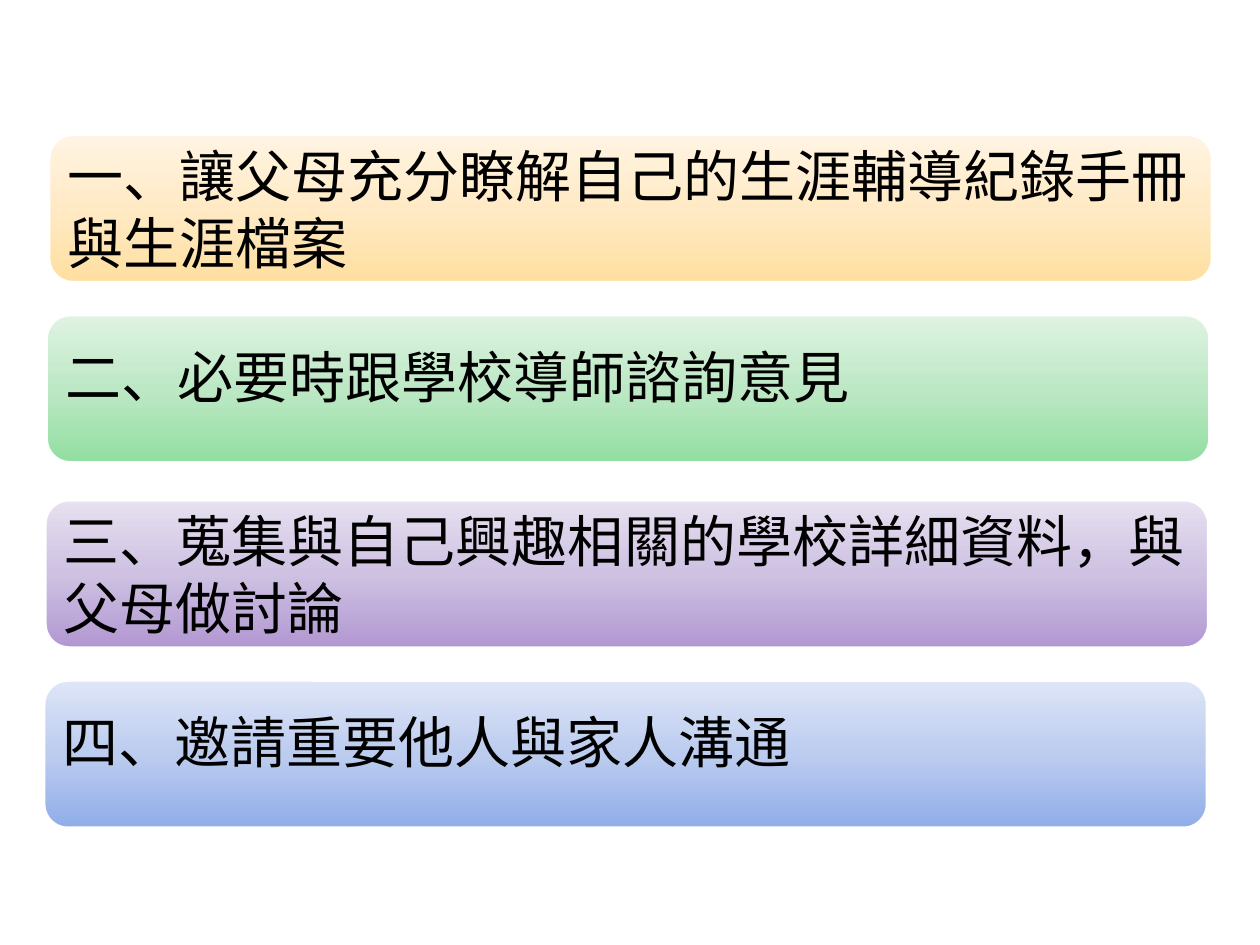
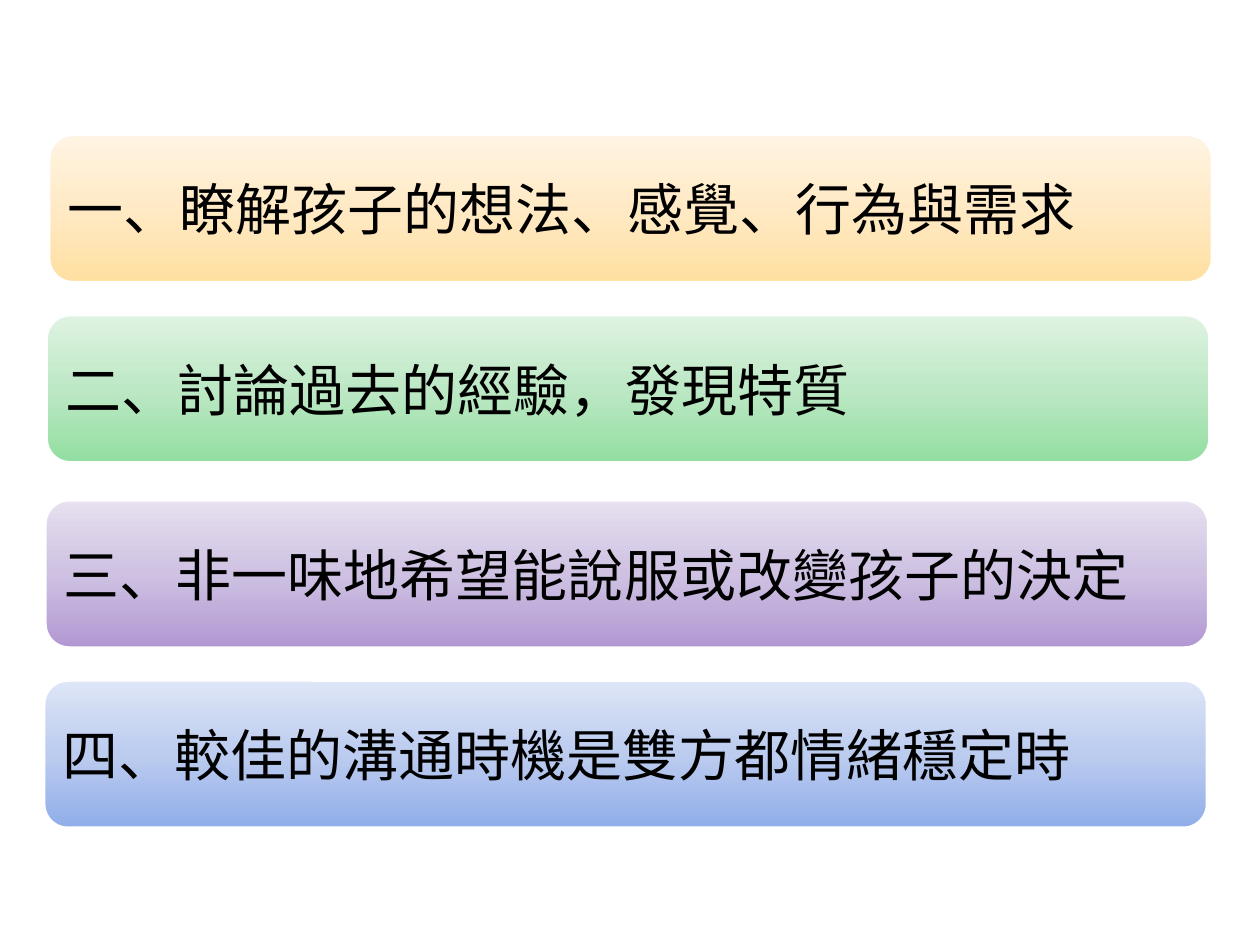
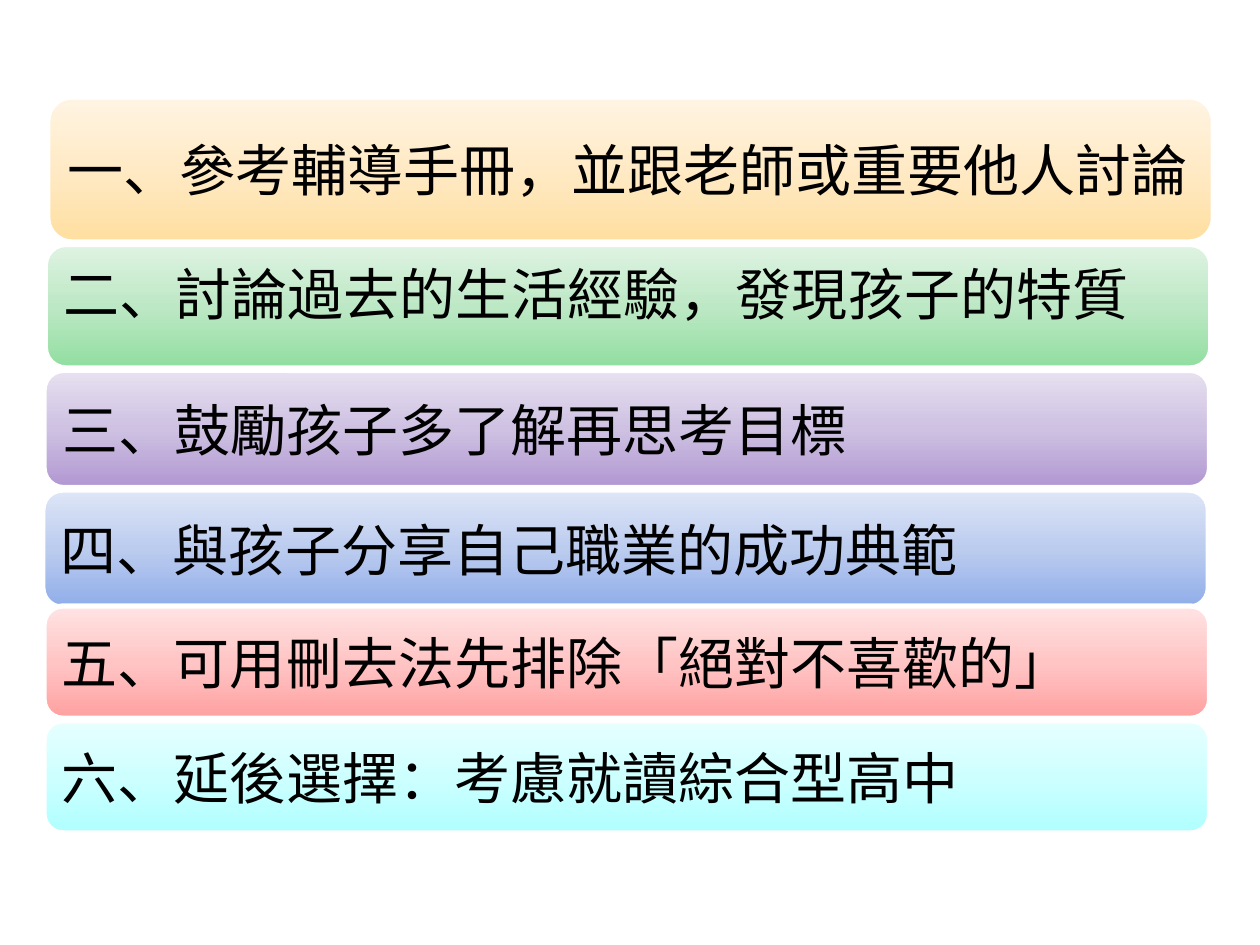
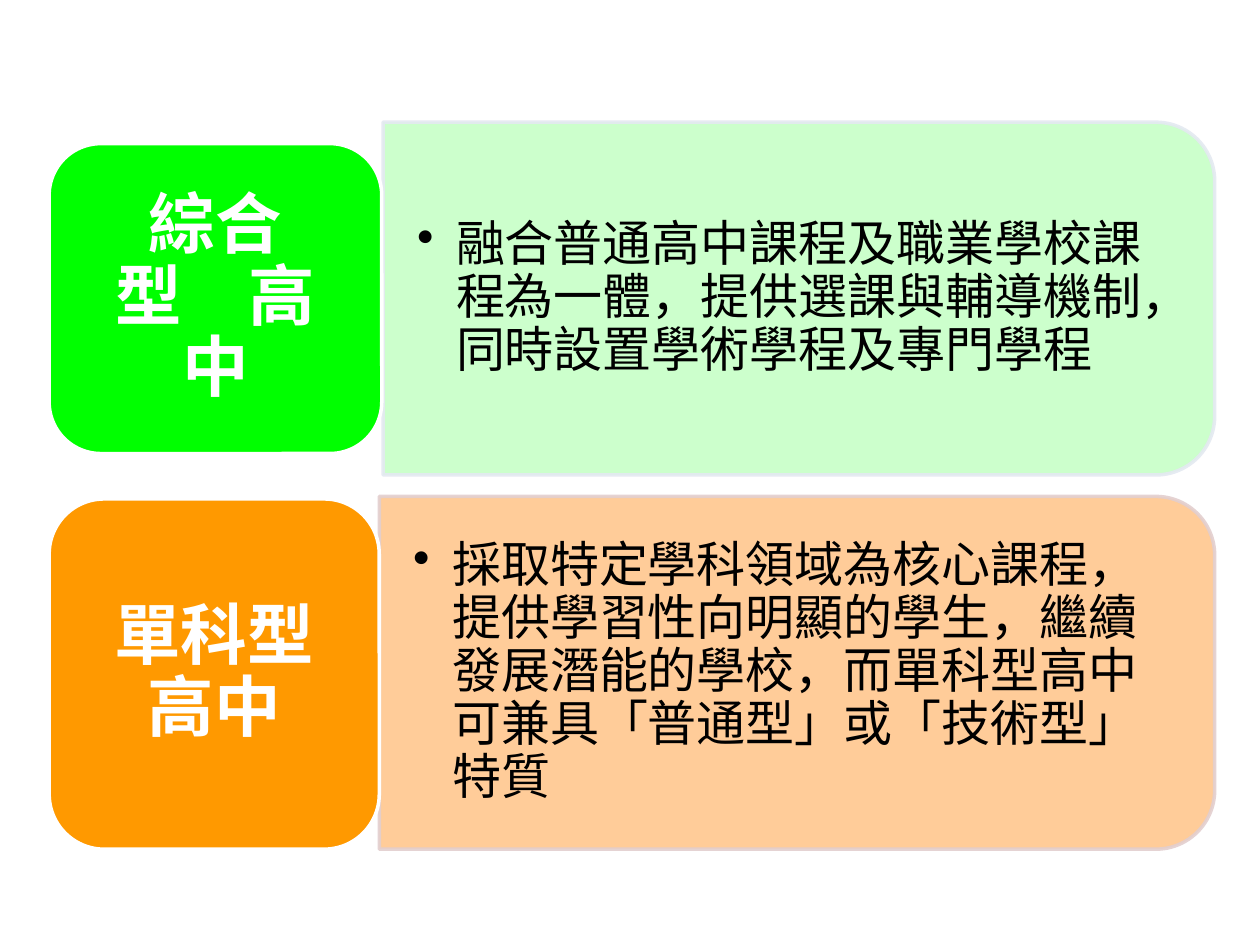
"""Build four slides of advice on family career talks and school types."""
from copy import deepcopy
from dataclasses import dataclass
from typing import Any, NamedTuple

from lxml.etree import SubElement
from pptx import Presentation
from pptx.dml.color import RGBColor
from pptx.enum.shapes import MSO_SHAPE as Preset
from pptx.enum.text import MSO_ANCHOR as Anchor, PP_ALIGN as Align
from pptx.oxml.ns import qn
from pptx.util import Inches, Pt


@dataclass(frozen=True)
class Theme:
    """Colours, fonts and type sizes of the deck."""
    black: str = "000000"
    white: str = "FFFFFF"
    bar_font: str = "Times New Roman"
    body_font: str = "Calibri"
    bar_size: int = 32
    body_size: int = 28
    tag_size: int = 38
    bar_line: float = 3
    block_line: float = 2
    gradients: tuple = (
        ("FFDFA0", "FFEAC5", "FFF4E3"),
        ("91DEA0", "BDE8C5", "DFF3E3"),
        ("B197D2", "CEC1E2", "E7E1F0"),
        ("8FADE9", "BCCCEF", "DEE6F7"),
        ("FFA0A0", "FFC5C5", "FFE3E3"),
        ("AFFFFF", "CEFFFF", "E7FFFF"),
    )


class Box(NamedTuple):
    """A frame in inches."""
    left: float
    top: float
    width: float
    height: float

    def lengths(self) -> list:
        """Return the frame as slide lengths."""
        return [Inches(value) for value in self]

    def inset(self, across: float, down: float) -> "Box":
        """Return the frame shrunk on all sides."""
        return Box(self.left + across, self.top + down,
                   self.width - 2 * across, self.height - 2 * down)

    def before_quarter_turn(self) -> "Box":
        """Return the frame that covers this one once turned by 90 degrees."""
        shift = (self.width - self.height) / 2
        return Box(self.left + shift, self.top - shift, self.height, self.width)


class Bar(NamedTuple):
    """One line of advice; tight bars use exact line spacing."""
    text: str
    tight: bool = False


class School(NamedTuple):
    """A school type with its tag and its description panel."""
    name: str
    description: str
    tag: Box
    panel: Box
    tag_fill: str
    panel_fill: str
    panel_line: str


THEME = Theme()
BAR_WIDTH = 9.25
BAR_LEFTS = (0.38, 0.36, 0.35, 0.34, 0.35, 0.35)
FOUR_ROWS = ((1.06, 1.19), (2.49, 1.19), (3.96, 1.19), (5.39, 1.19))
SIX_ROWS = ((0.77, 1.15), (1.94, 0.98), (2.94, 0.93),
            (3.89, 0.93), (4.81, 0.89), (5.72, 0.89))

BAR_SLIDES = (
    (FOUR_ROWS, (
        Bar("一、讓父母充分瞭解自己的生涯輔導紀錄手冊與生涯檔案"),
        Bar("二、必要時跟學校導師諮詢意見", tight=True),
        Bar("三、蒐集與自己興趣相關的學校詳細資料，與父母做討論"),
        Bar("四、邀請重要他人與家人溝通", tight=True),
    )),
    (FOUR_ROWS, (
        Bar("一、瞭解孩子的想法、感覺、行為與需求"),
        Bar("二、討論過去的經驗，發現特質"),
        Bar("三、非一味地希望能說服或改變孩子的決定"),
        Bar("四、較佳的溝通時機是雙方都情緒穩定時"),
    )),
    (SIX_ROWS, (
        Bar("一、參考輔導手冊，並跟老師或重要他人討論"),
        Bar("二、討論過去的生活經驗，發現孩子的特質", tight=True),
        Bar("三、鼓勵孩子多了解再思考目標"),
        Bar("四、與孩子分享自己職業的成功典範"),
        Bar("五、可用刪去法先排除「絕對不喜歡的」"),
        Bar("六、延後選擇：考慮就讀綜合型高中"),
    )),
)

SCHOOLS = (
    School("綜合型　高中",
           "融合普通高中課程及職業學校課程為一體，提供選課與輔導機制，同時設置學術學程及專門學程",
           Box(0.39, 1.14, 2.64, 2.46), Box(3.04, 0.97, 6.6, 2.8),
           "00FF00", "CCFFCC", "E4E9F1"),
    School("單科型高中",
           "採取特定學科領域為核心課程，提供學習性向明顯的學生，繼續發展潛能的學校，而單科型高中可兼具「普通型」或「技術型」特質",
           Box(0.39, 3.96, 2.62, 2.78), Box(3.01, 3.94, 6.63, 2.8),
           "FF9900", "FFCC99", "E3CFCF"),
)


def apply(target: Any, values: dict) -> None:
    """Set every named attribute on the target."""
    for name, value in values.items():
        setattr(target, name, value)


def add_block(shapes: Any, preset: Any, box: Box, line: str, weight: float) -> Any:
    """Add an outlined preset shape without a shadow."""
    shape = shapes.add_shape(preset, *box.lengths())
    shape.shadow.inherit = False
    shape.line.color.rgb = RGBColor.from_string(line)
    shape.line.width = Pt(weight)
    return shape


def fill_solid(shape: Any, colour: str) -> None:
    """Give the shape one plain colour."""
    shape.fill.solid()
    shape.fill.fore_color.rgb = RGBColor.from_string(colour)


def fill_gradient(shape: Any, colours: tuple) -> None:
    """Blend evenly spaced colours from the bottom edge to the top."""
    fill = shape.fill
    fill.gradient()
    fill.gradient_angle = 90
    stop_list = shape._element.spPr.find(qn("a:gradFill")).find(qn("a:gsLst"))
    while len(stop_list) < len(colours):
        stop_list.append(deepcopy(stop_list[0]))
    for index, (stop, colour) in enumerate(zip(fill.gradient_stops, colours)):
        stop.position = index / (len(colours) - 1)
        stop.color.rgb = RGBColor.from_string(colour)


def fade_line(shape: Any, percent: int) -> None:
    """Set the opacity of a solid outline."""
    colour = shape.line._get_or_add_ln().find(qn("a:solidFill"))[0]
    SubElement(colour, qn("a:alpha"), val=str(percent * 1000))


def add_bullet(paragraph: Any, indent: float) -> None:
    """Hang the paragraph on a round bullet."""
    properties = paragraph._p.get_or_add_pPr()
    length = int(Inches(indent))
    properties.set("marL", str(length))
    properties.set("indent", str(-length))
    SubElement(properties, qn("a:buChar"), char="•")


def write(shape: Any, text: str, font: dict, colour: str,
          frame: dict, layout: dict, bullet_indent: float = 0) -> None:
    """Write one formatted, vertically centred paragraph."""
    text_frame = shape.text_frame
    apply(text_frame, {"word_wrap": True, "vertical_anchor": Anchor.MIDDLE, **frame})
    paragraph = text_frame.paragraphs[0]
    paragraph.text = text
    apply(paragraph, layout)
    if bullet_indent:
        add_bullet(paragraph, bullet_indent)
    run_font = paragraph.runs[0].font
    apply(run_font, font)
    run_font.color.rgb = RGBColor.from_string(colour)


def margins(across: float, down: float) -> dict:
    """Return equal side margins and equal top and bottom margins."""
    return {"margin_left": Inches(across), "margin_right": Inches(across),
            "margin_top": Inches(down), "margin_bottom": Inches(down)}


def draw_bars(slide: Any, rows: tuple, bars: tuple) -> None:
    """Stack the coloured advice bars."""
    font = {"name": THEME.bar_font, "size": Pt(THEME.bar_size)}
    for left, (top, height), bar, colours in zip(BAR_LEFTS, rows, bars, THEME.gradients):
        box = Box(left, top, BAR_WIDTH, height)
        shape = add_block(slide.shapes, Preset.ROUNDED_RECTANGLE, box,
                          THEME.white, THEME.bar_line)
        fill_gradient(shape, colours)
        layout = {"alignment": Align.LEFT}
        if bar.tight:
            layout["line_spacing"] = Pt(24)
        write(shape, bar.text, font, THEME.black, {}, layout)


def draw_school(shapes: Any, school: School) -> None:
    """Draw the description panel and the name tag of a school type."""
    panel = add_block(shapes, Preset.ROUND_2_SAME_RECTANGLE,
                      school.panel.before_quarter_turn(),
                      school.panel_line, THEME.block_line)
    panel.rotation = 90
    fill_solid(panel, school.panel_fill)
    fade_line(panel, 90)

    panel_text = school.panel.inset(0, 0.14)._replace(width=school.panel.width - 0.13)
    write(shapes.add_textbox(*panel_text.lengths()), school.description,
          {"name": THEME.body_font, "size": Pt(THEME.body_size)}, THEME.black,
          margins(0.27, 0.14),
          {"level": 1, "alignment": Align.LEFT, "line_spacing": 0.9,
           "space_after": Pt(4.2)},
          bullet_indent=0.31)

    tag = add_block(shapes, Preset.ROUNDED_RECTANGLE, school.tag,
                    THEME.white, THEME.block_line)
    fill_solid(tag, school.tag_fill)
    write(shapes.add_textbox(*school.tag.inset(0.12, 0.12).lengths()), school.name,
          {"name": THEME.body_font, "size": Pt(THEME.tag_size), "bold": True},
          THEME.white, margins(0.16, 0.08),
          {"alignment": Align.CENTER, "line_spacing": 0.9, "space_after": Pt(13.3)})


def main() -> None:
    """Build and save the deck."""
    presentation = Presentation()
    apply(presentation, {"slide_width": Inches(10), "slide_height": Inches(7.5)})
    blank = presentation.slide_layouts[6]
    for rows, bars in BAR_SLIDES:
        draw_bars(presentation.slides.add_slide(blank), rows, bars)
    school_group = presentation.slides.add_slide(blank).shapes.add_group_shape()
    for school in SCHOOLS:
        draw_school(school_group.shapes, school)
    presentation.save("out.pptx")


if __name__ == "__main__":
    main()
